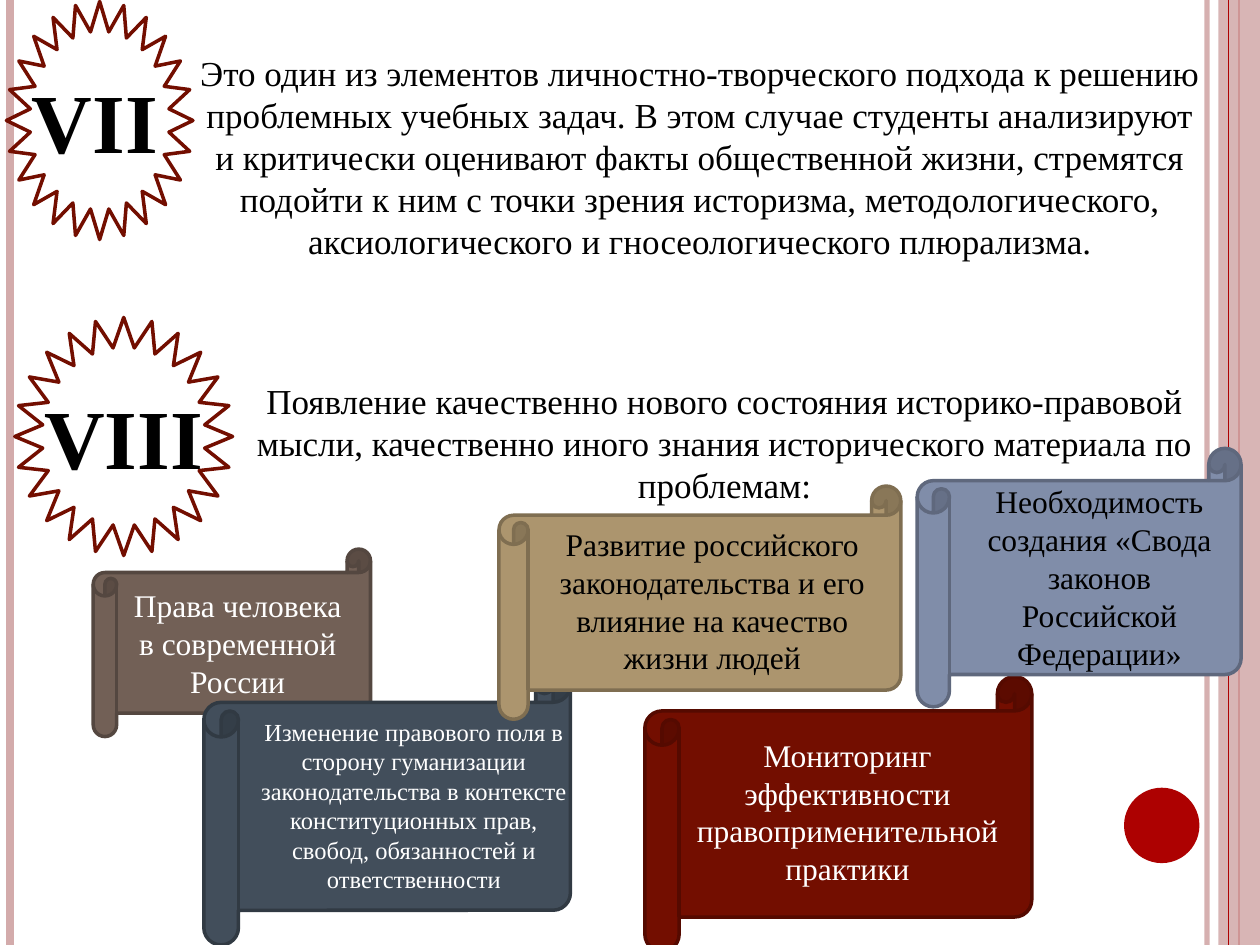
from lxml.etree import SubElement as Sub
from pptx import Presentation as Deck
from pptx.dml.color import RGBColor as Rgb
from pptx.enum.shapes import MSO_CONNECTOR as Link, MSO_SHAPE as Form
from pptx.enum.text import MSO_ANCHOR as Anchor, PP_ALIGN as Align
from pptx.oxml.ns import qn
from pptx.util import Cm, Pt

HUES = {
    "white": "FFFFFF", "black": "000000", "rose": "D3ABAB", "red": "AD0101",
    "wine": "730E00", "plum": "550A00", "brown": "726056", "bark": "544740",
    "slate": "424E5B", "night": "313A43", "sand": "AC956E", "ochre": "7F6E51",
    "blue": "808DA9", "steel": "5F687D",
}
WIDE, HIGH = 25.4, 19.05
FACE = "Times New Roman"

BARS = [(24.33, "rose", 3, 93), (0.2, "rose", 4.5, 100), (24.97, "red", 1.5, 100)]
EDGE = (24.77, "red", 0.75, 100)
BAND = (24.56, 0, 0.84, HIGH)
DOT = (22.66, 15.88, 1.52, 1.52)

PARTS = [
    ("VII", (0.13, 0.03, 3.76, 4.8), (0.13, 1.27, 3.56, 2.31),
     "Это один из элементов личностно-творческого подхода к решению проблемных "
     "учебных задач. В этом случае студенты анализируют и критически оценивают "
     "факты общественной жизни, стремятся подойти к ним с точки зрения историзма, "
     "методологического, аксиологического и гносеологического плюрализма.",
     (3.71, 0.91, 20.8, 4.52)),
    ("VIII", (0.3, 6.4, 4.39, 4.8), (0.3, 7.65, 4.39, 2.31),
     "Появление качественно нового состояния историко-правовой мысли, "
     "качественно иного знания исторического материала по проблемам:",
     (4.7, 7.52, 19.81, 2.82)),
]

SCROLLS = [
    ("Права человека в современной России", 18, "white", "brown", "bark",
     (1.88, 11.07, 5.59, 3.78), None),
    ("Изменение правового поля в сторону гуманизации законодательства в контексте "
     "конституционных прав, свобод, обязанностей и ответственности",
     14, "white", "slate", "night",
     (4.11, 13.46, 7.39, 5.59), (4.8, 14.33, 7.09, 3.84)),
    ("Развитие российского законодательства и его влияние на качество жизни людей",
     18, "black", "sand", "ochre",
     (10.06, 9.8, 8.1, 4.7), (10.64, 10.46, 7.44, 3.33)),
    ("Мониторинг эффективности правоприменительной практики",
     18, "white", "wine", "plum",
     (13, 13.64, 7.8, 5.54), (13.49, 14.71, 7.19, 3.33)),
    ("Необходимость создания «Свода законов Российской Федерации»",
     18, "black", "blue", "steel",
     (18.49, 9.04, 6.53, 5.21), (19.28, 9.6, 5.77, 4.11)),
]


def tint(name):
    return Rgb.from_string(HUES[name])


def fade(node, rate):
    if rate < 100:
        Sub(node.find(".//" + qn("a:srgbClr")), qn("a:alpha"), val=str(rate * 1000))


def draw(host, form, box, fill, edge=None):
    item = host.add_shape(form, *map(Cm, box))
    item.shadow.inherit = False
    item.fill.solid()
    item.fill.fore_color.rgb = tint(fill)
    if edge:
        item.line.color.rgb = tint(edge)
        item.line.width = Pt(2)
    else:
        item.line.fill.background()
    return item


def rule(host, left, hue, width, rate):
    item = host.add_connector(Link.STRAIGHT, Cm(left), 0, Cm(left), Cm(HIGH))
    item.line.color.rgb = tint(hue)
    item.line.width = Pt(width)
    props = item._element.spPr
    fade(props, rate)
    Sub(props, qn("a:effectLst"))
    return item


def write(item, text, size, hue, bold=False):
    frame = item.text_frame
    frame.word_wrap = True
    line = frame.paragraphs[0]
    line.alignment = Align.CENTER
    run = line.add_run()
    run.text = text
    for key, value in {"name": FACE, "size": Pt(size), "bold": bold}.items():
        setattr(run.font, key, value)
    run.font.color.rgb = tint(hue)


def label(host, box, *style):
    write(host.add_textbox(*map(Cm, box)), *style)


def main():
    deck = Deck()
    deck.slide_width, deck.slide_height = Cm(WIDE), Cm(HIGH)
    page = deck.slides.add_slide(deck.slide_layouts[6]).shapes

    rules = [rule(page, *bar) for bar in BARS]
    band = draw(page, Form.RECTANGLE, BAND, "rose")
    fade(band._element.spPr, 87)
    rules[-1].begin_connect(band, 0)
    rules[-1].end_connect(band, 2)
    rule(page, *EDGE)
    draw(page, Form.OVAL, DOT, "red")

    for mark, star, spot, text, box in PARTS:
        group = page.add_group_shape().shapes
        draw(group, Form.STAR_24_POINT, star, "white", "wine")
        label(group, spot, mark, 48, "black", True)
        label(page, box, text, 20, "black")

    for text, size, hue, fill, edge, box, spot in SCROLLS:
        roll = draw(page, Form.HORIZONTAL_SCROLL, box, fill, edge)
        if spot:
            label(page, spot, text, size, hue)
        else:
            roll.text_frame.vertical_anchor = Anchor.MIDDLE
            write(roll, text, size, hue)

    deck.save("out.pptx")


if __name__ == "__main__":
    main()
